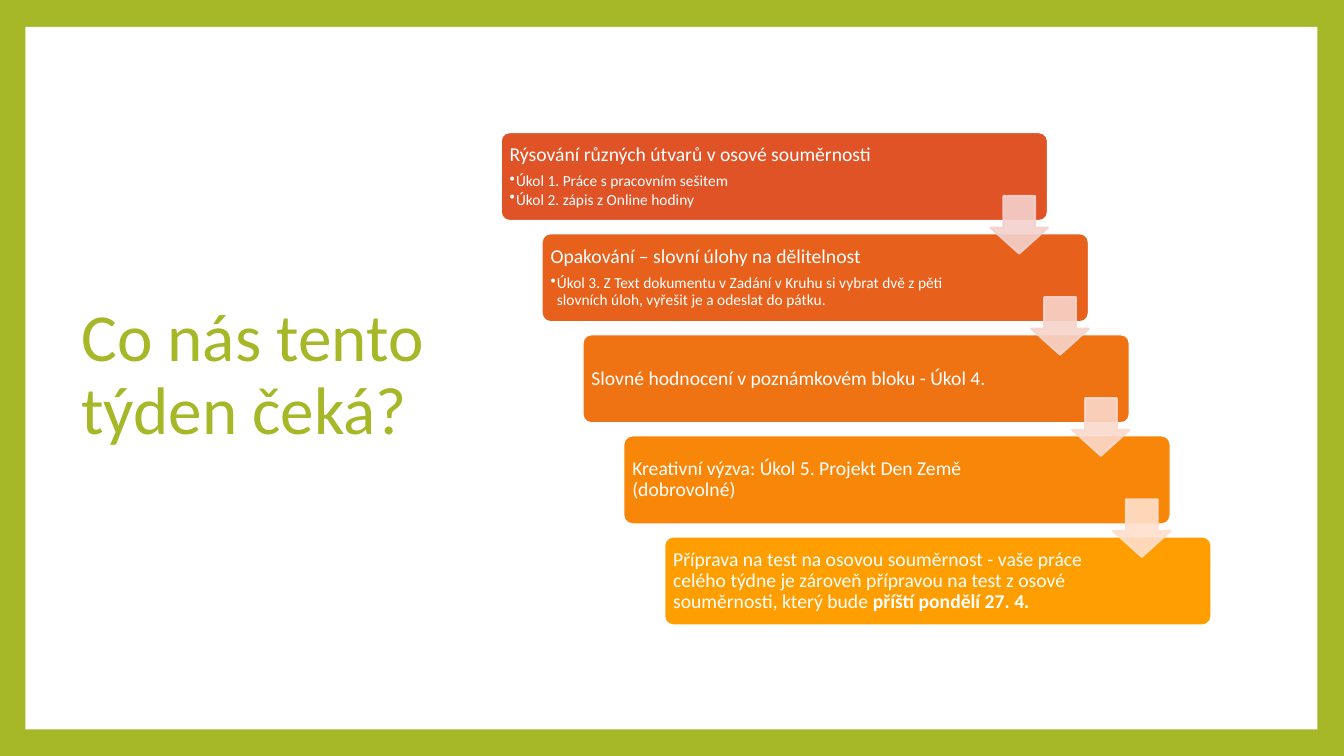
from dataclasses import dataclass

from lxml import etree
from pptx import Presentation
from pptx import util as u
from pptx.dml.color import RGBColor
from pptx.enum import shapes, text
from pptx.oxml import ns


@dataclass(frozen=True)
class Theme:
    font: str = "Calibri"
    green: str = "A6B727"
    white: str = "FFFFFF"
    steps: tuple = ("DF5327", "E7611D", "EF7213", "F78609", "FE9E00")
    arrows: tuple = ("F3D1CD", "F7D4CC", "FBD9CC", "FFDFCC")
    arrow_alpha: int = 90
    title_size: int = 48
    step_size: int = 14
    task_size: int = 11
    outline: float = 1.5


THEME = Theme()
TITLE = "Co nás tento týden čeká?"

# Each step: heading runs as (words, bold), then its tasks
STEPS = [
    ([("Rýsování různých útvarů v osové souměrnosti", False)],
     ["Úkol 1. Práce s pracovním sešitem", "Úkol 2. zápis z Online hodiny"]),
    ([("Opakování – slovní úlohy na dělitelnost", False)],
     ["Úkol 3. Z Text dokumentu v Zadání v Kruhu si vybrat dvě z pěti "
      "slovních úloh, vyřešit je a odeslat do pátku."]),
    ([("Slovné hodnocení v poznámkovém bloku - Úkol 4.", False)], []),
    ([("Kreativní výzva: Úkol 5. Projekt Den Země (dobrovolné)", False)], []),
    ([("Příprava na test na osovou souměrnost - vaše práce celého týdne je "
       "zároveň přípravou na test z osové souměrnosti, který bude ", False),
      ("příští pondělí 27. 4.", True)], []),
]


def add_filled(slide, preset, box, fill, line=None):
    part = slide.shapes.add_shape(preset, *(u.Cm(length) for length in box))
    part.shadow.inherit = False
    part.fill.solid()
    part.fill.fore_color.rgb = RGBColor.from_string(fill)
    if line:
        part.line.color.rgb = RGBColor.from_string(line)
        part.line.width = u.Pt(THEME.outline)
    else:
        part.line.fill.background()
    return part


def style_paragraph(paragraph, size, color, space_after=0):
    paragraph.alignment = text.PP_ALIGN.LEFT
    paragraph.line_spacing = 0.9
    paragraph.space_after = u.Pt(space_after)
    paragraph.font.name = THEME.font
    paragraph.font.size = u.Pt(size)
    paragraph.font.color.rgb = RGBColor.from_string(color)


def add_bullet(paragraph, indent):
    properties = paragraph._p.get_or_add_pPr()
    properties.set("marL", str(indent))
    properties.set("indent", str(-indent))
    etree.SubElement(properties, ns.qn("a:buChar")).set("char", "•")
    # The bullet has to stand before the default run properties
    properties.append(properties.find(ns.qn("a:defRPr")))


def add_title(slide, box):
    title = slide.shapes.add_textbox(*(u.Cm(length) for length in box))
    frame = title.text_frame
    frame.word_wrap = True
    frame.vertical_anchor = text.MSO_ANCHOR.MIDDLE
    frame.text = TITLE
    style_paragraph(frame.paragraphs[0], THEME.title_size, THEME.green)


def add_step(slide, box, fill, heading, tasks):
    step = add_filled(slide, shapes.MSO_SHAPE.ROUNDED_RECTANGLE, box, fill, THEME.white)
    step.adjustments[0] = 0.1
    frame = step.text_frame
    frame.word_wrap = True
    frame.vertical_anchor = text.MSO_ANCHOR.MIDDLE
    frame.margin_left = frame.margin_top = frame.margin_bottom = u.Cm(0.16)
    frame.margin_right = u.Cm(2.63)  # keeps the words clear of the arrows

    first = frame.paragraphs[0]
    for words, bold in heading:
        run = first.add_run()
        run.text = words
        if bold:
            run.font.bold = True
    style_paragraph(first, THEME.step_size, THEME.white, 5)

    for task in tasks:
        paragraph = frame.add_paragraph()
        paragraph.text = task
        paragraph.level = 1
        style_paragraph(paragraph, THEME.task_size, THEME.white, 1.5)
        add_bullet(paragraph, u.Cm(0.16))


def add_arrow(slide, box, color):
    arrow = add_filled(slide, shapes.MSO_SHAPE.DOWN_ARROW, box, color, color)
    arrow.adjustments[0] = 0.45
    arrow.adjustments[1] = 0.55
    # adjustments: head length first, then shaft width
    arrow.adjustments[0], arrow.adjustments[1] = 0.55, 0.45
    for tint in arrow._element.spPr.iter(ns.qn("a:srgbClr")):
        etree.SubElement(tint, ns.qn("a:alpha")).set("val", str(THEME.arrow_alpha * 1000))


def add_staircase(slide, box):
    left, top, width, height = box
    step_width, step_height, arrow_side = 13.79, 2.24, 1.45
    shift = (width - step_width) / (len(STEPS) - 1)
    drop = (height - step_height) / (len(STEPS) - 1)

    corners = [(left + i * shift, top + i * drop) for i in range(len(STEPS))]
    for (x, y), fill, (heading, tasks) in zip(corners, THEME.steps, STEPS):
        add_step(slide, (x, y, step_width, step_height), fill, heading, tasks)
    # Arrows end flush with the right edge of the step they leave
    for (x, y), color in zip(corners, THEME.arrows):
        add_arrow(slide, (x + step_width - arrow_side, y + 1.61,
                          arrow_side, arrow_side), color)


def main():
    deck = Presentation()
    deck.slide_width, deck.slide_height = u.Cm(33.87), u.Cm(19.05)
    slide = deck.slides.add_slide(deck.slide_layouts[6])

    # Green frame around a white panel
    slide.background.fill.solid()
    slide.background.fill.fore_color.rgb = RGBColor.from_string(THEME.green)
    add_filled(slide, shapes.MSO_SHAPE.RECTANGLE, (0.64, 0.68, 32.56, 17.7), THEME.white)

    add_title(slide, (1.8, 1.7, 9.35, 15.57))
    add_staircase(slide, (12.62, 3.33, 17.91, 12.43))
    deck.save("out.pptx")


if __name__ == "__main__":
    main()
